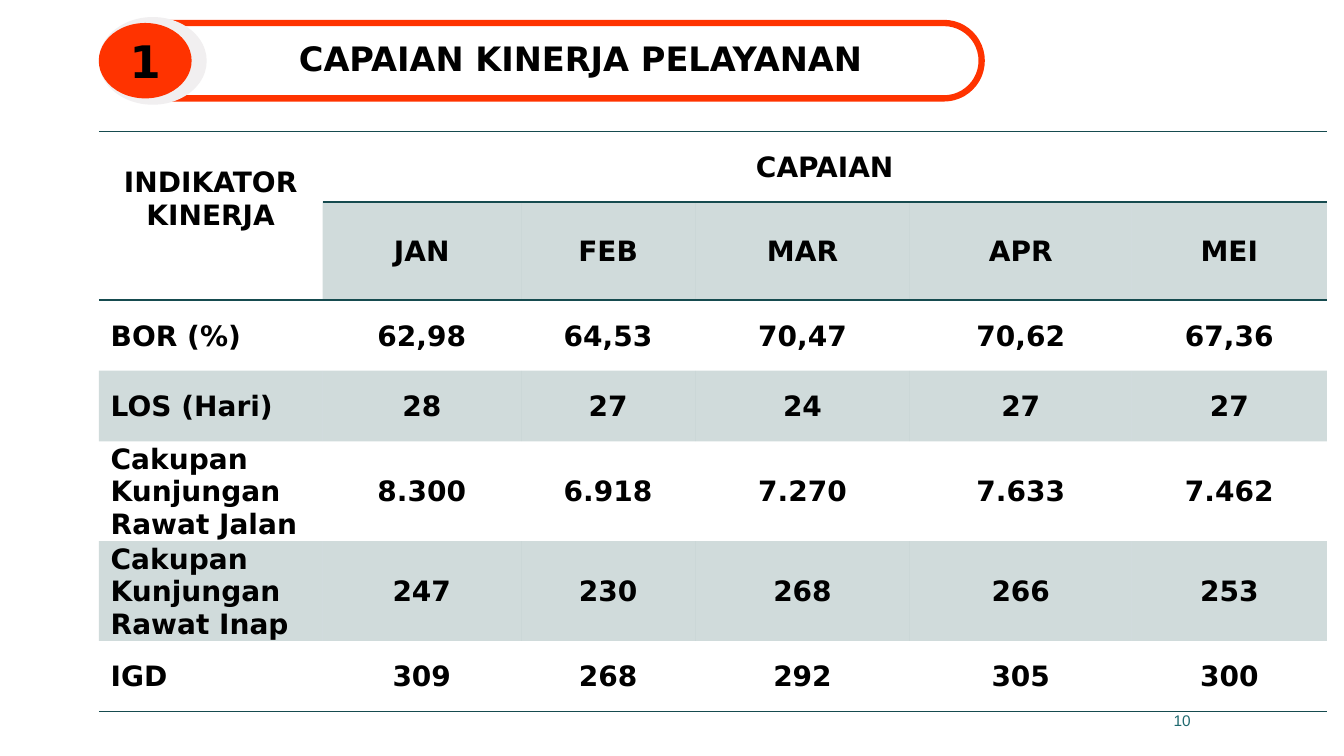
from lxml.etree import SubElement
from pptx import Presentation
from pptx.dml.color import RGBColor
from pptx.enum.shapes import MSO_SHAPE
from pptx.enum.text import MSO_ANCHOR, MSO_AUTO_SIZE, PP_ALIGN
from pptx.oxml import parse_xml
from pptx.oxml.ns import nsdecls, qn
from pptx.util import Cm, Pt

TEAL = "164B4F"
ORANGE = "FF3300"
HEADING_FONT = "DejaVu Sans"
NO_STYLE = "{2D5ABB26-0587-4C30-8999-92F81FD0307C}"

COL_WIDTHS = [5.64, 5, 4.39, 5.41, 5.59, 4.92]
ROW_HEIGHTS = [1.78, 2.47, 1.78, 1.78, 2.5, 2.5, 1.78]
ROWS = [
    ["INDIKATOR KINERJA", "CAPAIAN", "", "", "", ""],
    ["", "JAN", "FEB", "MAR", "APR", "MEI"],
    ["BOR (%)", "62,98", "64,53", "70,47", "70,62", "67,36"],
    ["LOS (Hari)", "28", "27", "24", "27", "27"],
    ["Cakupan Kunjungan Rawat Jalan", "8.300", "6.918", "7.270", "7.633", "7.462"],
    ["Cakupan Kunjungan Rawat Inap", "247", "230", "268", "266", "253"],
    ["IGD", "309", "268", "292", "305", "300"],
]


def rgb(value):
    return RGBColor.from_string(value)


def write(tf, text, size, align=PP_ALIGN.CENTER, color="000000", font=HEADING_FONT, bold=True):
    tf.text = text
    p = tf.paragraphs[0]
    p.alignment = align
    for r in p.runs:
        r.font.size = Pt(size)
        r.font.name = font
        r.font.bold = bold
        r.font.color.rgb = rgb(color)


def add_preset(shapes, kind, left, top, width, height, fill=None, line=None):
    sp = shapes.add_shape(kind, Cm(left), Cm(top), Cm(width), Cm(height))
    sp.shadow.inherit = False
    if fill:
        sp.fill.solid()
        sp.fill.fore_color.rgb = rgb(fill)
    else:
        sp.fill.background()
    if line:
        sp.line.color.rgb = rgb(line)
        sp.line.width = Pt(4.5)
    else:
        sp.line.fill.background()
    return sp


def add_heading(slide, left, top, number, text):
    """Numbered disc with a pill-shaped frame around the slide title."""
    shapes = slide.shapes.add_group_shape().shapes
    pill = add_preset(shapes, MSO_SHAPE.ROUNDED_RECTANGLE,
                      left + 0.3, top + 0.15, 21.95, 1.9, line=ORANGE)
    pill.adjustments[0] = 0.5
    add_preset(shapes, MSO_SHAPE.OVAL, left, top, 2.72, 2.21, fill="F1EFF0")
    disc = add_preset(shapes, MSO_SHAPE.OVAL, left, top + 0.15, 2.34, 1.9, fill=ORANGE)
    disc.text_frame.vertical_anchor = MSO_ANCHOR.MIDDLE
    write(disc.text_frame, number, 32)

    title = slide.shapes.title
    title.left, title.top = Cm(left + 1.22), Cm(top - 0.23)
    title.width, title.height = Cm(21.84), Cm(1.9)
    tf = title.text_frame
    tf.auto_size = MSO_AUTO_SIZE.NONE
    tf.vertical_anchor = MSO_ANCHOR.BOTTOM
    write(tf, text, 24)
    tf.paragraphs[0].line_spacing = 0.9


def style_fill(cell, shaded):
    if not shaded:
        cell.fill.background()
        return
    cell.fill.solid()
    cell.fill.fore_color.rgb = rgb(TEAL)
    color = next(cell._tc.tcPr.iter(qn("a:srgbClr")))
    SubElement(color, qn("a:alpha")).set("val", "20000")


def add_borders(cell, sides):
    """Draw 1 pt borders; sides are listed in schema order (T before B)."""
    tc_pr = cell._tc.get_or_add_tcPr()
    for i, side in enumerate(sides):
        tc_pr.insert(i, parse_xml(
            f'<a:ln{side} {nsdecls("a")} w="12700"><a:solidFill>'
            f'<a:srgbClr val="{TEAL}"/></a:solidFill></a:ln{side}>'))


def add_indicator_table(slide, left, top):
    frame = slide.shapes.add_table(len(ROWS), len(COL_WIDTHS), Cm(left), Cm(top),
                                   Cm(sum(COL_WIDTHS)), Cm(sum(ROW_HEIGHTS)))
    table = frame.table
    next(frame._element.iter(qn("a:tableStyleId"))).text = NO_STYLE
    for column, width in zip(table.columns, COL_WIDTHS):
        column.width = Cm(width)
    for row, height in zip(table.rows, ROW_HEIGHTS):
        row.height = Cm(height)

    last = len(ROWS) - 1
    for i, values in enumerate(ROWS):
        for j, value in enumerate(values):
            cell = table.cell(i, j)
            is_label = j == 0 and i > 1
            cell.vertical_anchor = MSO_ANCHOR.MIDDLE
            cell.margin_left = Cm(0.3 if is_label else 0.05)
            cell.margin_right = cell.margin_top = Cm(0.05)
            cell.margin_bottom = 0
            write(cell.text_frame, value, 20,
                  PP_ALIGN.LEFT if is_label else PP_ALIGN.CENTER)
            style_fill(cell, i in (3, 5) or (i == 1 and j > 0))
            if i == 0:
                add_borders(cell, "TB")
            elif i == 1 and j > 0:
                add_borders(cell, "T")
            elif i in (1, last):
                add_borders(cell, "B")

    corner = table.cell(0, 0)
    corner.margin_left = corner.margin_right = corner.margin_top = 0
    corner.margin_bottom = Cm(0.82)
    corner.merge(table.cell(1, 0))
    table.cell(0, 1).merge(table.cell(0, len(COL_WIDTHS) - 1))


def add_page_number(slide, left, top, number):
    box = slide.shapes.add_textbox(Cm(left), Cm(top), Cm(7.9), Cm(1.02))
    tf = box.text_frame
    tf.word_wrap = True
    tf.vertical_anchor = MSO_ANCHOR.MIDDLE
    write(tf, number, 11, PP_ALIGN.RIGHT, "1F696F", "Arial", False)


def main():
    prs = Presentation()
    prs.slide_width, prs.slide_height = Cm(33.87), Cm(19.05)
    slide = prs.slides.add_slide(prs.slide_layouts[5])
    add_heading(slide, 2.49, 0.43, "1", "CAPAIAN KINERJA PELAYANAN")
    add_indicator_table(slide, 2.49, 3.31)
    add_page_number(slide, 22.36, 17.65, "10")
    prs.save("out.pptx")


if __name__ == "__main__":
    main()
